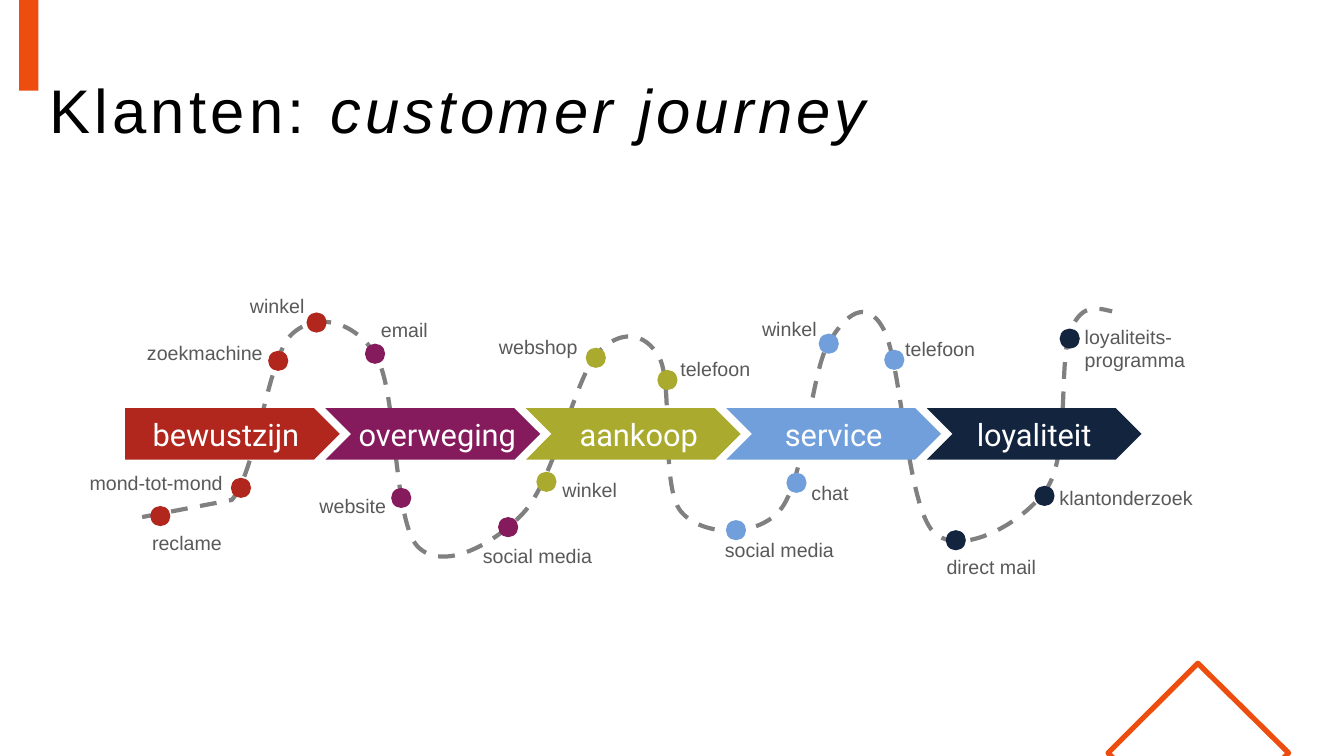
from pptx import Presentation
from pptx.dml.color import RGBColor
from pptx.enum.dml import MSO_LINE_DASH_STYLE as Dash
from pptx.enum.shapes import MSO_SHAPE as Preset
from pptx.enum.text import MSO_ANCHOR as Anchor, PP_ALIGN as Align
from pptx.oxml.ns import qn
from pptx.oxml.xmlchemy import OxmlElement
from pptx.util import Inches, Pt

COLORS = {
    "accent": "ED4D0F", "route": "808080", "label": "595959",
    "black": "000000", "white": "FFFFFF",
    "bewustzijn": "B1271E", "overweging": "851A5D", "aankoop": "AAAB2E",
    "service": "709FDB", "loyaliteit": "13243F",
}
CELL = 0.1  # inches; every place and size below counts these grid cells

STAGE_LEFT, STAGE_TOP, STAGE_STEP = 12.4, 40.5, 19.88
STAGE_SIZE = (21.3, 5.1)
TEXT_SHIFT = {"overweging": 0.9, "aankoop": 1.1}

# per stage: dot left, dot top, label, label left, label top, label width
TOUCHPOINTS = {
    "bewustzijn": [
        (14.9, 50.2, "reclame", 14.1, 52.2, 9),
        (22.9, 47.4, "mond-tot-mond", 7.9, 46.2, 15.3),
        (26.6, 34.8, "zoekmachine", 13.6, 33.3, 13.6),
        (30.4, 31, "winkel", 23.8, 28.7, 7.5),
    ],
    "overweging": [
        (36.2, 34.1, "email", 36.8, 31, 6.7),
        (38.8, 48.4, "website", 30.7, 48.5, 8.7),
        (49.4, 51.3, "social media", 46.9, 53.5, 13.2),
    ],
    "aankoop": [
        (53.2, 46.8, "winkel", 54.8, 46.9, 7.5),
        (58.1, 34.5, "webshop", 48.5, 32.7, 9.9),
        (65.2, 36.7, "telefoon", 66.5, 34.9, 9),
    ],
    "service": [
        (72, 51.6, "social media", 70.9, 52.9, 12.9),
        (78, 46.9, "chat", 79.5, 47.2, 5.7),
        (81.2, 33.1, "winkel", 74.6, 30.9, 7.5),
        (87.7, 34.7, "telefoon", 88.8, 32.9, 9),
    ],
    "loyaliteit": [
        (93.8, 52.6, "direct mail", 92.9, 54.6, 11.3),
        (102.6, 48.2, "klantonderzoek", 104.1, 47.7, 15.3),
        (105.1, 32.6, "loyaliteits-\nprogramma", 106.6, 31.7, 12),
    ],
}
ROUTE_START = [(14.1, 51.3), (23, 49.6)]
ROUTE_CURVES = [
    (25.5, 46.6), (26.5, 35.6), (28.9, 33.2), (31.3, 30.9), (35.2, 31.8), (37.3, 35.3),
    (39.4, 38.8), (39, 51.6), (41.4, 54.2), (43.9, 56.8), (49, 54), (51.9, 50.9),
    (54.9, 47.7), (57, 37.7), (59.2, 35.1), (61.5, 32.6), (64, 32.9), (65.4, 35.5),
    (66.8, 38.1), (65.5, 48.2), (67.5, 50.7), (69.5, 53.2), (74.9, 53.4), (77.3, 50.7),
    (79.8, 47.9), (80.4, 37.2), (82.1, 34.2), (83.8, 31.2), (85.9, 29.5), (87.6, 32.6),
    (89.4, 35.7), (89.9, 50.1), (92.6, 52.8), (95.3, 55.4), (101.6, 51.8), (103.8, 48.5),
    (106.1, 45.2), (105, 36), (106.1, 33.1), (107.1, 30.1), (108.7, 30.5), (110.3, 30.9),
]
DIAMOND = [(126.9, 75.6), (110.8, 75.6), (109.9, 74.7), (118.8, 65.8), (127.8, 74.7)]


def cells(*counts):
    return [Inches(count * CELL) for count in counts]


def color(name):
    return RGBColor.from_string(COLORS[name])


class JourneySlide:
    def __init__(self, deck):
        self.page = deck.slides.add_slide(deck.slide_layouts[6])
        self.shapes = self.page.shapes

    def style(self, holder, name, size, font="Arial"):
        holder.font.name, holder.font.size = font, Pt(size)
        holder.font.color.rgb = color(name)

    def block(self, preset, left, top, width, height, name):
        shape = self.shapes.add_shape(preset, *cells(left, top, width, height))
        shape.shadow.inherit = False
        shape.fill.solid()
        shape.fill.fore_color.rgb = color(name)
        shape.line.fill.background()
        return shape

    def outline(self, points, name, weight, close=False):
        builder = self.shapes.build_freeform(*cells(*points[0]))
        builder.add_line_segments([cells(*point) for point in points[1:]], close=close)
        shape = builder.convert_to_shape()
        shape.shadow.inherit = False
        shape.fill.background()
        shape.line.color.rgb = color(name)
        shape.line.width = Pt(weight)
        return shape

    def route(self, start, curves):
        """Draw the dashed route: a straight start, then one Bézier per three points."""
        shape = self.outline(start + curves, "route", 3)
        shape.line.dash_style = Dash.DASH
        segments = list(shape._element.iter(qn("a:lnTo")))[len(start) - 1:]
        for first in range(0, len(segments), 3):
            bezier = OxmlElement("a:cubicBezTo")
            segments[first].addprevious(bezier)
            for segment in segments[first:first + 3]:
                bezier.append(segment[0])
                segment.getparent().remove(segment)

    def title(self, parts, left, top, width, height):
        box = self.shapes.add_textbox(*cells(left, top, width, height))
        frame = box.text_frame
        frame.word_wrap, frame.vertical_anchor = True, Anchor.MIDDLE
        para = frame.paragraphs[0]
        para.line_spacing = 0.9
        for text, italic in parts:
            span = para.add_run()
            span.text = text
            self.style(span, "black", 44)
            span.font.italic = italic
            span.font._element.set("spc", "300")

    def stage(self, index, name):
        preset = Preset.CHEVRON if index else Preset.PENTAGON
        left = STAGE_LEFT + index * STAGE_STEP
        shape = self.block(preset, left, STAGE_TOP, *STAGE_SIZE, name)
        frame = shape.text_frame
        frame.word_wrap, frame.vertical_anchor = False, Anchor.MIDDLE
        frame.margin_left, frame.margin_right = cells(TEXT_SHIFT.get(name, 0), 0)
        para = frame.paragraphs[0]
        para.text, para.alignment = name, Align.CENTER
        self.style(para.runs[0], "white", 22, "Roboto")

    def touchpoint(self, name, dot_left, dot_top, label, left, top, width):
        self.block(Preset.OVAL, dot_left, dot_top, 2, 2, name)
        height = 3.4 + 2.3 * label.count("\n")
        box = self.shapes.add_textbox(*cells(left, top, width, height))
        box.text_frame.word_wrap = False
        para = box.text_frame.paragraphs[0]
        para.text = label
        for span in para.runs:
            self.style(span, "label", 14)


def main():
    deck = Presentation()
    deck.slide_width, deck.slide_height = Inches(13.33), Inches(7.5)
    slide = JourneySlide(deck)
    slide.block(Preset.RECTANGLE, 1.9, -2.5, 1.9, 11.5, "accent")
    slide.outline(DIAMOND, "accent", 3.75, close=True)
    slide.title([("Klanten: ", False), ("customer journey", True)], 3.9, 4, 125.8, 14.5)
    slide.route(ROUTE_START, ROUTE_CURVES)
    for index, name in enumerate(TOUCHPOINTS):
        slide.stage(index, name)
    for name, touchpoints in TOUCHPOINTS.items():
        for touchpoint in touchpoints:
            slide.touchpoint(name, *touchpoint)
    deck.save("out.pptx")


if __name__ == "__main__":
    main()
